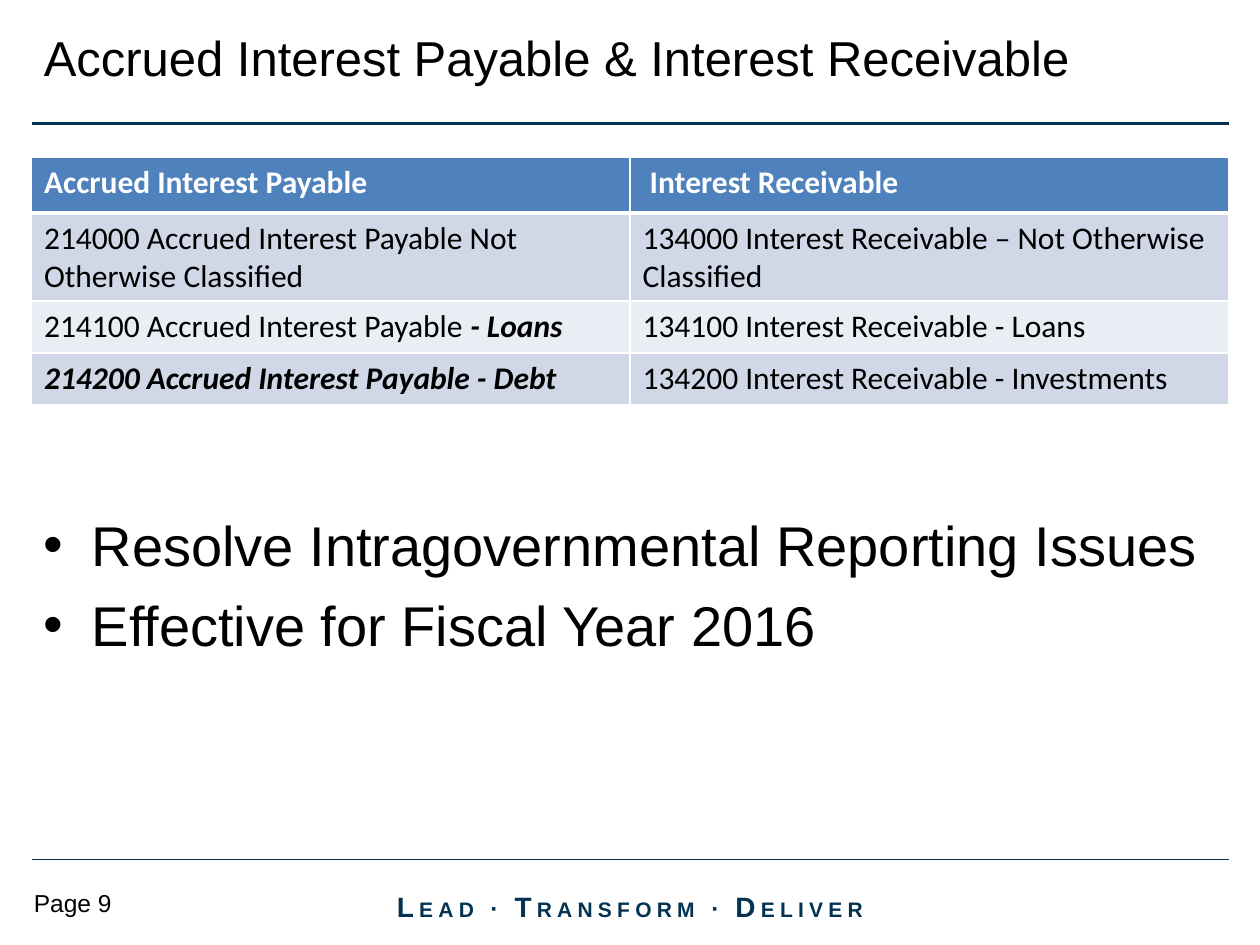
"""Build the slide on accrued interest payable and interest receivable."""
from dataclasses import dataclass

from lxml import etree
from pptx import Presentation
from pptx.dml.color import RGBColor
from pptx.enum.shapes import MSO_CONNECTOR
from pptx.enum.text import MSO_ANCHOR, PP_ALIGN
from pptx.oxml.ns import qn
from pptx.util import Inches, Pt

STRAIGHT = MSO_CONNECTOR.STRAIGHT
MIDDLE = MSO_ANCHOR.MIDDLE
CENTER = PP_ALIGN.CENTER


@dataclass(frozen=True)
class Theme:
    """Hold the colours, fonts and type sizes of the slide."""
    navy: str = "043253"
    black: str = "000000"
    white: str = "FFFFFF"
    header: str = "4F81BD"
    bands: tuple = ("D0D8E8", "E9EDF4")
    font: str = "Arial"
    table_font: str = "Calibri"
    title: int = 28
    bullet: int = 32
    table: int = 18
    page_number: int = 14
    motto_capital: int = 16
    motto_dot: int = 14
    motto_small: int = 12


THEME = Theme()
MARGIN, CONTENT_WIDTH = 0.25, 9.5
ROW_HEIGHTS = (0.44, 0.7, 0.41, 0.41)
BULLETS = ("Resolve Intragovernmental Reporting Issues", "Effective for Fiscal Year 2016")
MOTTO = ("Lead", "Transform", "Deliver")
# Each cell is a pair: plain text, then emphasised text.
ROWS = (
    (("Accrued Interest Payable", ""), (" Interest Receivable", "")),
    (("214000 Accrued Interest Payable Not Otherwise Classified", ""),
     ("134000 Interest Receivable – Not Otherwise Classified", "")),
    (("214100 Accrued Interest Payable ", "- Loans"),
     ("134100 Interest Receivable - Loans", "")),
    (("", "214200 Accrued Interest Payable - Debt"),
     ("134200 Interest Receivable - Investments", "")),
)


def style(font, size, color=THEME.black, name=THEME.font, bold=False, italic=False):
    """Set the face, size, colour and weight of a font."""
    font.name, font.size = name, Pt(size)
    font.bold, font.italic = bold, italic
    font.color.rgb = RGBColor.from_string(color)


def add_rule(page, top, weight):
    """Draw a horizontal rule across the content width."""
    rule = page.shapes.add_connector(STRAIGHT, Inches(MARGIN), Inches(top),
                                     Inches(MARGIN + CONTENT_WIDTH), Inches(top))
    rule.line.color.rgb = RGBColor.from_string(THEME.navy)
    rule.line.width = Pt(weight)
    etree.SubElement(rule._element.spPr, qn("a:effectLst"))


def add_text(page, area, text, size):
    """Add a wrapped text box and return its text frame."""
    box = page.shapes.add_textbox(*map(Inches, area))
    frame = box.text_frame
    frame.word_wrap = True
    frame.text = text
    for para in frame.paragraphs:
        for span in para.runs:
            style(span.font, size)
    return frame


def add_bullets(page, area, items):
    """Add a bulleted list with a hanging indent."""
    frame = add_text(page, area, "\n".join(items), THEME.bullet)
    for index, para in enumerate(frame.paragraphs):
        properties = para._p.get_or_add_pPr()
        properties.set("marL", str(Inches(0.38)))
        properties.set("indent", str(-Inches(0.38)))
        if index:
            para.space_before = Pt(7.4)
        etree.SubElement(properties, qn("a:buFont"), typeface=THEME.font)
        etree.SubElement(properties, qn("a:buChar"), char="•")


def add_motto(page, area, words):
    """Add the letterspaced motto with large initials."""
    frame = add_text(page, area, "", THEME.motto_small)
    frame.vertical_anchor = MIDDLE
    para = frame.paragraphs[0]
    para.alignment = CENTER
    pieces = []
    for index, word in enumerate(words):
        if index:
            pieces.append(("∙ ", THEME.motto_dot))
        ending = " " if index < len(words) - 1 else ""
        pieces += [(word[0], THEME.motto_capital),
                   (word[1:].upper() + ending, THEME.motto_small)]
    for text, size in pieces:
        span = para.add_run()
        span.text = text
        style(span.font, size, THEME.navy, bold=True)
        span._r.get_or_add_rPr().set("spc", "300")


def add_borders(cell, bottom_weight):
    """Give a cell white borders, placed ahead of its fill."""
    properties = cell._tc.get_or_add_tcPr()
    weights = {"lnL": 1, "lnR": 1, "lnT": 1, "lnB": bottom_weight}
    for index, (side, weight) in enumerate(weights.items()):
        line = etree.Element(qn(f"a:{side}"), w=str(Pt(weight)))
        fill = etree.SubElement(line, qn("a:solidFill"))
        etree.SubElement(fill, qn("a:srgbClr"), val=THEME.white)
        properties.insert(index, line)


def fill_cell(cell, texts, is_header, fill):
    """Write the plain and emphasised text of a cell and colour it."""
    cell.fill.solid()
    cell.fill.fore_color.rgb = RGBColor.from_string(fill)
    add_borders(cell, 3 if is_header else 1)
    for text, emphasis in zip(texts, (False, True)):
        if text:
            span = cell.text_frame.paragraphs[0].add_run()
            span.text = text
            style(span.font, THEME.table, THEME.white if is_header else THEME.black,
                  THEME.table_font, bold=is_header or emphasis, italic=emphasis)


def add_accounts(page, rows):
    """Add the table of accounts with a header and banded rows."""
    area = (MARGIN, 1.25, CONTENT_WIDTH, sum(ROW_HEIGHTS))
    table = page.shapes.add_table(len(rows), len(rows[0]), *map(Inches, area)).table
    for index, row in enumerate(rows):
        table.rows[index].height = Inches(ROW_HEIGHTS[index])
        fill = THEME.bands[(index - 1) % 2] if index else THEME.header
        for column, texts in enumerate(row):
            fill_cell(table.cell(index, column), texts, index == 0, fill)


def main():
    """Build and save the deck."""
    deck = Presentation()
    deck.slide_width, deck.slide_height = Inches(10), Inches(7.5)
    page = deck.slides.add_slide(deck.slide_layouts[6])
    add_rule(page, 6.82, 0.75)
    add_motto(page, (2.83, 6.99, 4.34, 0.4), MOTTO)
    add_rule(page, 0.98, 2.25)
    add_text(page, (0.17, 7, 1.25, 0.33), "Page 9", THEME.page_number)
    add_bullets(page, (MARGIN, 4, CONTENT_WIDTH, 2.75), BULLETS)
    add_text(page, (MARGIN, 0.17, CONTENT_WIDTH, 0.75),
             "Accrued Interest Payable & Interest Receivable", THEME.title)
    add_accounts(page, ROWS)
    deck.save("out.pptx")


if __name__ == "__main__":
    main()
